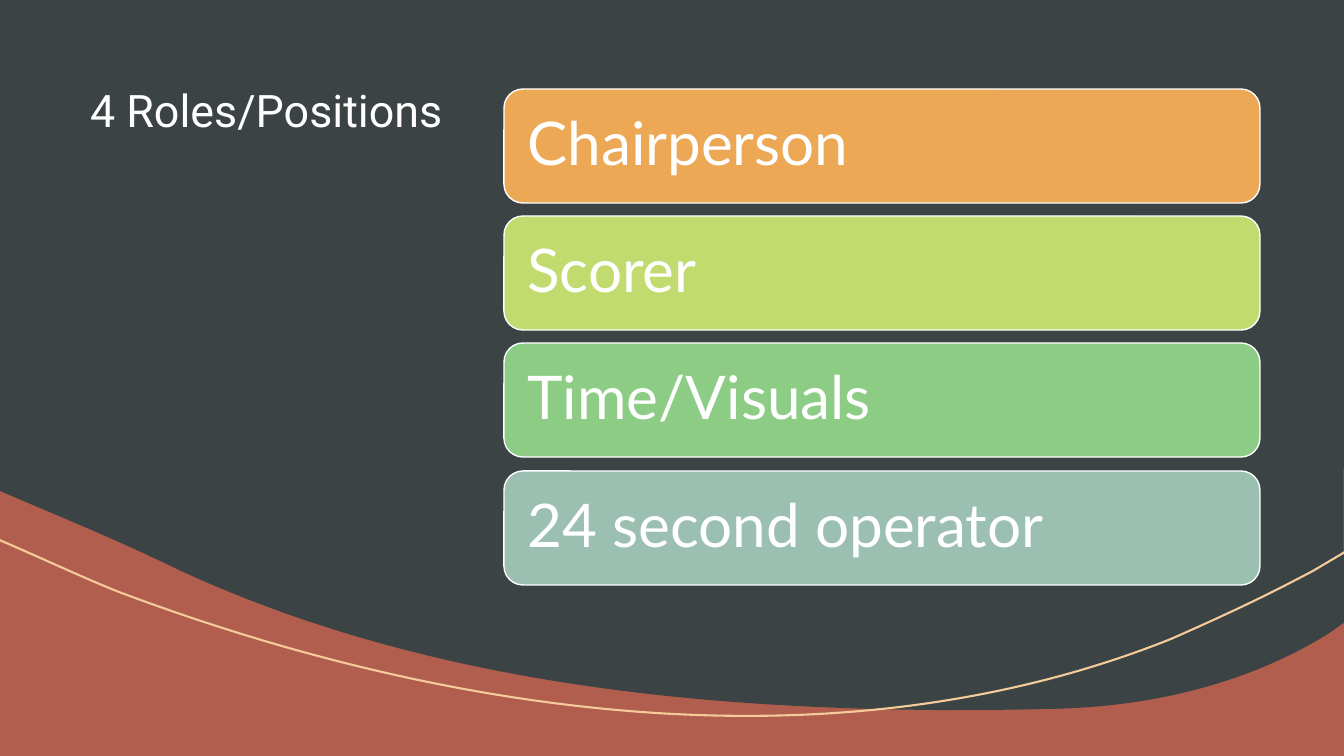
from lxml import etree
from pptx import Presentation
from pptx.dml.color import RGBColor
from pptx.enum import shapes, text
from pptx.oxml import ns
from pptx.util import Pt

PX = 12192000 / 1344
COLOURS = {
    "clay": "B15E4E", "slate": "3B4345", "sand": "F4CB99", "white": "FFFFFF",
    "orange": "ECA855", "lime": "C2DB6E", "green": "8CCC85", "sage": "9BBFB0",
}
ROLES = [("Chairperson", "orange"), ("Scorer", "lime"),
         ("Time/Visuals", "green"), ("24 second operator", "sage")]
ROLES_TOP, ROLES_SPAN = 89, 382
WAVE = [(0, 0), (1345, 0), (1345, 622), (1328, 634),
        (1242, 687, 1142, 708, 1045, 709), (1010, 710, 973, 710, 937, 710),
        (682, 708, 417, 680, 179, 570), (136, 549, 92, 530, 47, 511), (0, 491)]
SWOOSH = [(1345, 468), (1345, 552), (1313, 571),
          (1286, 585, 1255, 602, 1171, 639), (848, 768, 469, 722, 127, 595),
          (99, 585, 37, 556, -3, 539)]


def colour(name):
    return RGBColor.from_string(COLOURS[name])


def write(frame, words, frame_format, font_format):
    for key, value in frame_format.items():
        setattr(frame, key, value)
    paragraph = frame.paragraphs[0]
    paragraph.alignment = text.PP_ALIGN.LEFT
    paragraph.line_spacing = 0.9
    run = paragraph.add_run()
    run.text = words
    for key, value in font_format.items():
        setattr(run.font, key, value)
    run.font.color.rgb = colour("white")


deck = Presentation()
deck.slide_width, deck.slide_height = round(1344 * PX), round(756 * PX)
slide = deck.slides.add_slide(deck.slide_layouts[5])
slide.background.fill.solid()
slide.background.fill.fore_color.rgb = colour("clay")

curves = []
for outline, closed in [(WAVE, True), (SWOOSH, False)]:
    points = [(round(x * PX), round(y * PX)) for segment in outline
              for x, y in zip(segment[::2], segment[1::2])]
    builder = slide.shapes.build_freeform(*points[0])
    builder.add_line_segments(points[1:], close=closed)
    curve = builder.convert_to_shape()
    curve.shadow.inherit = False
    steps = iter(list(curve.element.iter(ns.qn("a:lnTo"))))
    for segment in outline[1:]:
        step = next(steps)
        if len(segment) == 6:
            bend = etree.Element(ns.qn("a:cubicBezTo"))
            step.addprevious(bend)
            for handle in (step, next(steps), next(steps)):
                bend.append(handle[0])
                handle.getparent().remove(handle)
    curves.append(curve)

wave, swoosh = curves
wave.fill.solid()
wave.fill.fore_color.rgb = colour("slate")
wave.line.fill.background()
swoosh.fill.background()
swoosh.line.color.rgb = colour("sand")
swoosh.line.width = Pt(1.5)

heading = slide.shapes.title
swoosh.element.addnext(heading.element)
for key, length in {"left": 80, "top": 84, "width": 397, "height": 252}.items():
    setattr(heading, key, round(length * PX))
write(heading.text_frame, "4 Roles/Positions",
      {"word_wrap": True, "vertical_anchor": text.MSO_ANCHOR.TOP,
       "auto_size": text.MSO_AUTO_SIZE.NONE},
      {"name": "Roboto", "size": Pt(32)})

inset = round(18 * PX)
for row, (role, tint) in enumerate(ROLES):
    top = ROLES_TOP + ROLES_SPAN * row // (len(ROLES) - 1)
    box = [round(n * PX) for n in (504, top, 756, 114)]
    card = slide.shapes.add_shape(shapes.MSO_SHAPE.ROUNDED_RECTANGLE, *box)
    card.shadow.inherit = False
    card.fill.solid()
    card.fill.fore_color.rgb = colour(tint)
    card.line.color.rgb = colour("white")
    card.line.width = Pt(1)
    write(card.text_frame, role,
          {"word_wrap": True, "vertical_anchor": text.MSO_ANCHOR.MIDDLE,
           "margin_left": inset, "margin_right": inset,
           "margin_top": inset, "margin_bottom": inset},
          {"name": "Lato", "size": Pt(43)})

deck.save("out.pptx")
